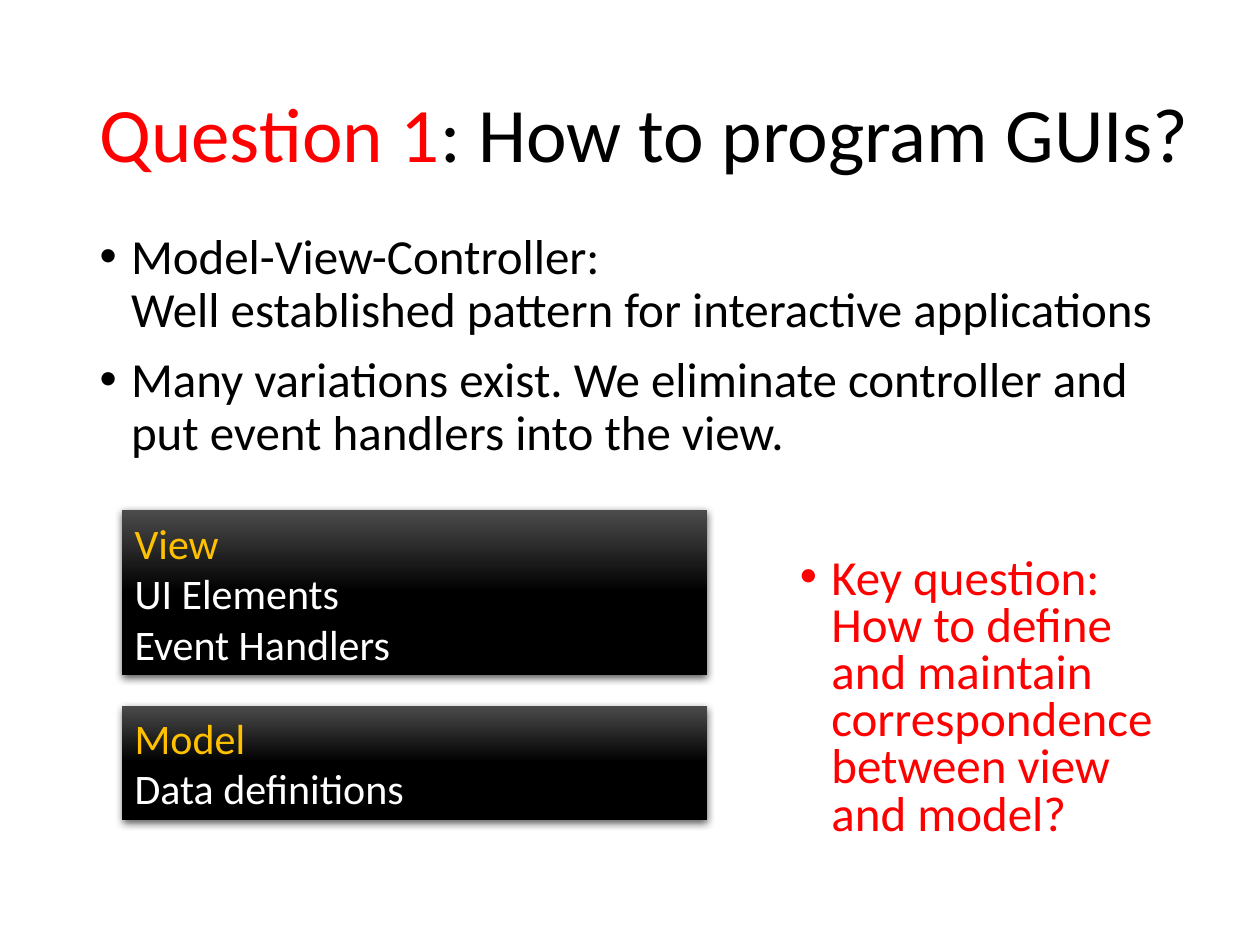
"""Build a slide on programming GUIs with the model-view pattern."""
from copy import deepcopy
from dataclasses import dataclass

from lxml import etree
from pptx import Presentation
from pptx.dml.color import RGBColor
from pptx.enum.shapes import MSO_SHAPE
from pptx.enum.text import MSO_ANCHOR, MSO_AUTO_SIZE, PP_ALIGN
from pptx.oxml.ns import qn
from pptx.util import Inches, Pt

RECT = MSO_SHAPE.RECTANGLE
TOP, MIDDLE = MSO_ANCHOR.TOP, MSO_ANCHOR.MIDDLE
LEFT = PP_ALIGN.LEFT
NO_FIT = MSO_AUTO_SIZE.NONE
FONT = "Calibri"
COLORS = {"text": "000000", "key": "FF0000", "head": "FFC000",
          "light": "FFFFFF", "sheen": "4B4B4B", "box": "000000"}


@dataclass
class Box:
    top: float
    height: float
    head: str
    items: list[str]


BOXES = [
    Box(5.6, 0.91, "Model", ["Data definitions"]),
    Box(4.05, 1.31, "View", ["UI Elements", "Event Handlers"]),
]
POINTS = [
    "Model-View-Controller:\nWell established pattern for interactive applications",
    "Many variations exist. We eliminate controller and put event handlers into the view.",
]
QUESTION = ("Key question: How to define and maintain correspondence "
            "between view and model?")


def place(s, left: float, top: float, width: float, height: float, anchor=TOP):
    """Position a shape and return its prepared text frame."""
    s.left, s.top = Inches(left), Inches(top)
    s.width, s.height = Inches(width), Inches(height)
    tf = s.text_frame
    tf.word_wrap = True
    tf.auto_size = NO_FIT
    tf.vertical_anchor = anchor
    return tf


def write(tf, text: str, *, size: int, color: str = "text", new: bool = True,
          spacing: float = 1.0, before: int = 0, bullet: bool = False) -> None:
    """Write formatted text into a new paragraph or the last one."""
    p = tf.paragraphs[-1]
    if new and p.runs:
        p = tf.add_paragraph()
    p.alignment = LEFT
    p.line_spacing = spacing
    p.space_before = Pt(before)
    for i, line in enumerate(text.split("\n")):
        if i:
            p.add_line_break()
        r = p.add_run()
        r.text = line
        r.font.name = FONT
        r.font.size = Pt(size)
        r.font.color.rgb = RGBColor.from_string(COLORS[color])
    for br in p._p.findall(qn("a:br")):
        br.append(deepcopy(r._r.rPr))
    if bullet:
        pPr = p._p.get_or_add_pPr()
        pPr.set("marL", str(Inches(0.25)))
        pPr.set("indent", str(-Inches(0.25)))
        etree.SubElement(pPr, qn("a:buFont")).set("typeface", "Arial")
        etree.SubElement(pPr, qn("a:buChar")).set("char", "•")


def add_shadow(s) -> None:
    """Give a shape a soft shadow below it."""
    s.shadow.inherit = False
    effects = s._element.spPr.find(qn("a:effectLst"))
    shadow = etree.SubElement(effects, qn("a:outerShdw"), blurRad=str(Pt(4.5)),
                              dist=str(Pt(1.5)), dir="5400000",
                              algn="ctr", rotWithShape="0")
    clr = etree.SubElement(shadow, qn("a:srgbClr"), val=COLORS["box"])
    etree.SubElement(clr, qn("a:alpha"), val="63000")


def draw_box(slide, box: Box) -> None:
    """Draw a glossy box with a heading and its items."""
    s = slide.shapes.add_shape(RECT, 0, 0, 0, 0)
    tf = place(s, 0.97, box.top, 4.64, box.height, MIDDLE)
    s.line.fill.background()
    s.fill.gradient()
    s.fill.gradient_angle = 270
    last = s.fill.gradient_stops[-1]._gs
    last.addnext(deepcopy(last))
    for stop, pos, color in zip(s.fill.gradient_stops, (0, 0.5, 1),
                                ("sheen", "box", "box")):
        stop.position = pos
        stop.color.rgb = RGBColor.from_string(COLORS[color])
    add_shadow(s)
    write(tf, box.head, size=24, color="head")
    for item in box.items:
        write(tf, item, size=24, color="light")


def main() -> None:
    """Build and save the slide."""
    prs = Presentation()
    prs.slide_width, prs.slide_height = Inches(10), Inches(7.5)
    slide = prs.slides.add_slide(prs.slide_layouts[1])
    title, body = slide.placeholders

    tf = place(title, 0.69, 0.55, 9.11, 1.77)
    tf.margin_top = Inches(0.21)
    write(tf, "Question 1", size=44, color="key", spacing=0.9)
    write(tf, ": How to program GUIs?", size=44, new=False, spacing=0.9)

    tf = place(body, 0.69, 1.79, 8.88, 2.76)
    for point in POINTS:
        write(tf, point, size=28, spacing=0.9, before=10, bullet=True)

    for box in BOXES:
        draw_box(slide, box)

    tf = place(slide.shapes.add_textbox(0, 0, 0, 0), 6.25, 4.38, 3.31, 2.44)
    write(tf, QUESTION, size=28, color="key", spacing=0.8, before=10, bullet=True)
    prs.save("out.pptx")


if __name__ == "__main__":
    main()
